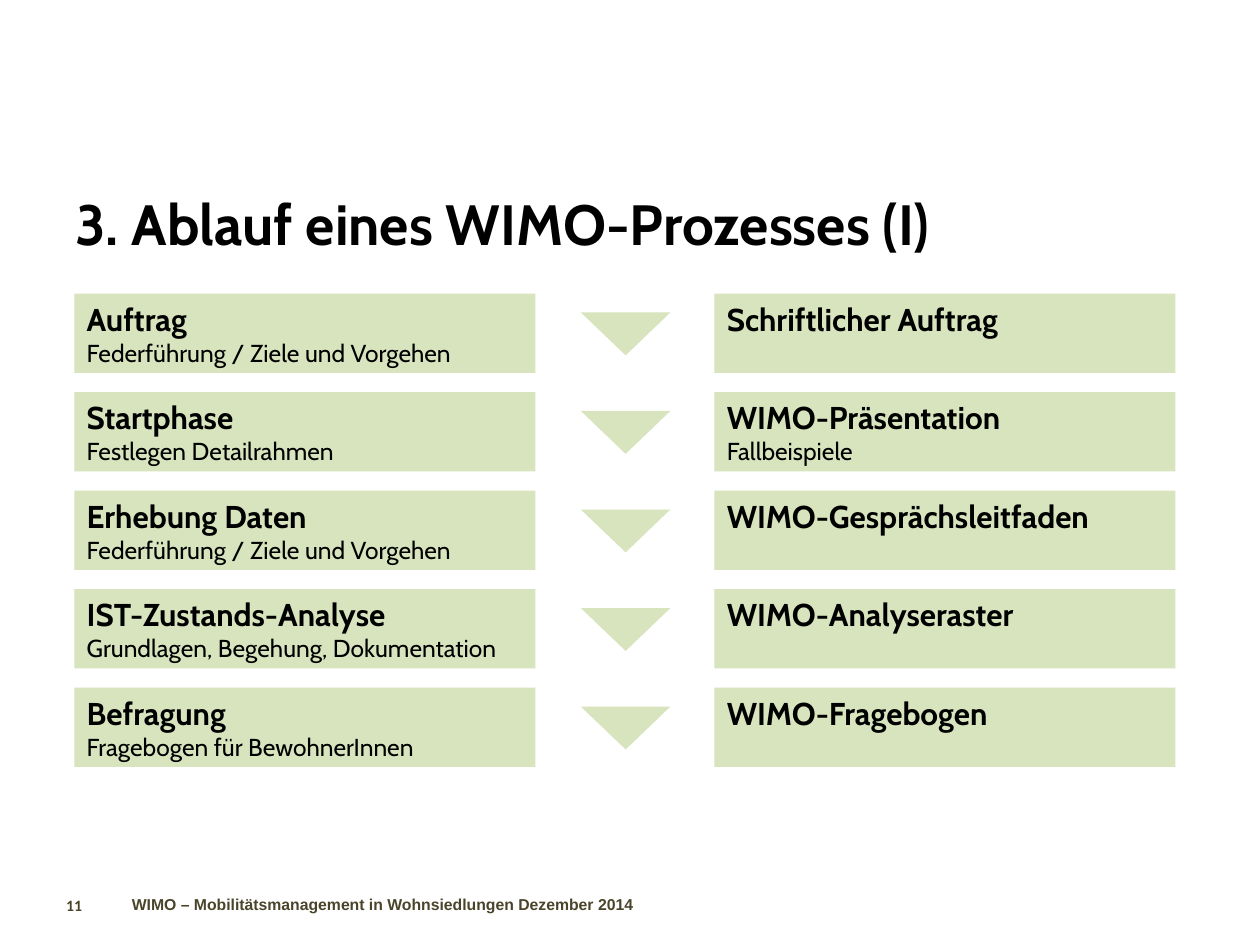
from pptx import Presentation
from pptx.dml.color import RGBColor
from pptx.enum.shapes import MSO_SHAPE
from pptx.enum.text import MSO_ANCHOR, PP_ALIGN
from pptx.util import Inches, Pt

RECTANGLE = MSO_SHAPE.RECTANGLE
TRIANGLE = MSO_SHAPE.ISOSCELES_TRIANGLE
TOP, MIDDLE = MSO_ANCHOR.TOP, MSO_ANCHOR.MIDDLE
LEFT, CENTER, RIGHT = PP_ALIGN.LEFT, PP_ALIGN.CENTER, PP_ALIGN.RIGHT

COLORS = {"text": "000000", "panel": "D7E4BD", "footer": "4A452A"}
COLUMNS, ROWS = 100, 75
ROW_PITCH = 7.82
STEPS = [
    (["Auftrag", "Federführung / Ziele und Vorgehen"], ["Schriftlicher Auftrag"]),
    (["Startphase", "Festlegen Detailrahmen"], ["WIMO-Präsentation", "Fallbeispiele"]),
    (["Erhebung Daten", "Federführung / Ziele und Vorgehen"], ["WIMO-Gesprächsleitfaden"]),
    (["IST-Zustands-Analyse", "Grundlagen, Begehung, Dokumentation"], ["WIMO-Analyseraster"]),
    (["Befragung", "Fragebogen für BewohnerInnen"], ["WIMO-Fragebogen"]),
]


class ProcessPage:
    """Hold the style and the current slide, and place elements on its grid."""

    def __init__(self, deck):
        self.column = deck.slide_width / COLUMNS
        self.row = deck.slide_height / ROWS
        self.page = deck.slides.add_slide(deck.slide_layouts[6])

    def area(self, left, top, width, height):
        return (round(left * self.column), round(top * self.row),
                round(width * self.column), round(height * self.row))

    def style(self, para, size, bold=True, font="Cabin", color="text", align=LEFT):
        para.alignment = align
        for span in para.runs:
            span.font.name = font
            span.font.size = Pt(size)
            span.font.bold = bold
            span.font.color.rgb = RGBColor.from_string(COLORS[color])

    def label(self, text, area, size, anchor=MIDDLE, **style):
        frame = self.page.shapes.add_textbox(*self.area(*area)).text_frame
        frame.word_wrap = True
        frame.vertical_anchor = anchor
        frame.text = text
        self.style(frame.paragraphs[0], size, **style)

    def shape(self, kind, area):
        shape = self.page.shapes.add_shape(kind, *self.area(*area))
        shape.shadow.inherit = False
        shape.fill.solid()
        shape.fill.fore_color.rgb = RGBColor.from_string(COLORS["panel"])
        shape.line.fill.background()
        return shape

    def panel(self, lines, left, top):
        frame = self.shape(RECTANGLE, (left, top, 36.6, 6.3)).text_frame
        frame.word_wrap = True
        frame.vertical_anchor = TOP
        frame.text = "\n".join(lines)
        for index, para in enumerate(frame.paragraphs):
            self.style(para, 14 if index else 18, bold=index == 0)

    def marker(self, left, top):
        self.shape(TRIANGLE, (left, top, 7.1, 3.4)).rotation = 180


def main():
    deck = Presentation()
    deck.slide_width, deck.slide_height = Inches(10), Inches(7.5)
    page = ProcessPage(deck)
    page.label("WIMO – Mobilitätsmanagement in Wohnsiedlungen Dezember 2014",
               (2.8, 70.6, 55.1, 2.3), 9, font="Arial", color="footer", align=CENTER)
    page.label("11", (2.8, 70.6, 4.7, 2.4), 9, anchor=TOP,
               font="Calibri", color="footer", align=RIGHT)
    page.label("3. Ablauf eines WIMO-Prozesses (I)", (5, 13.1, 89.1, 9.1), 32.4)
    for index, (task, result) in enumerate(STEPS):
        top = 23.3 + index * ROW_PITCH
        page.panel(task, 5.9, top)
        page.panel(result, 56.7, top)
        page.marker(46.1, top + 1.5)
    deck.save("out.pptx")


if __name__ == "__main__":
    main()
